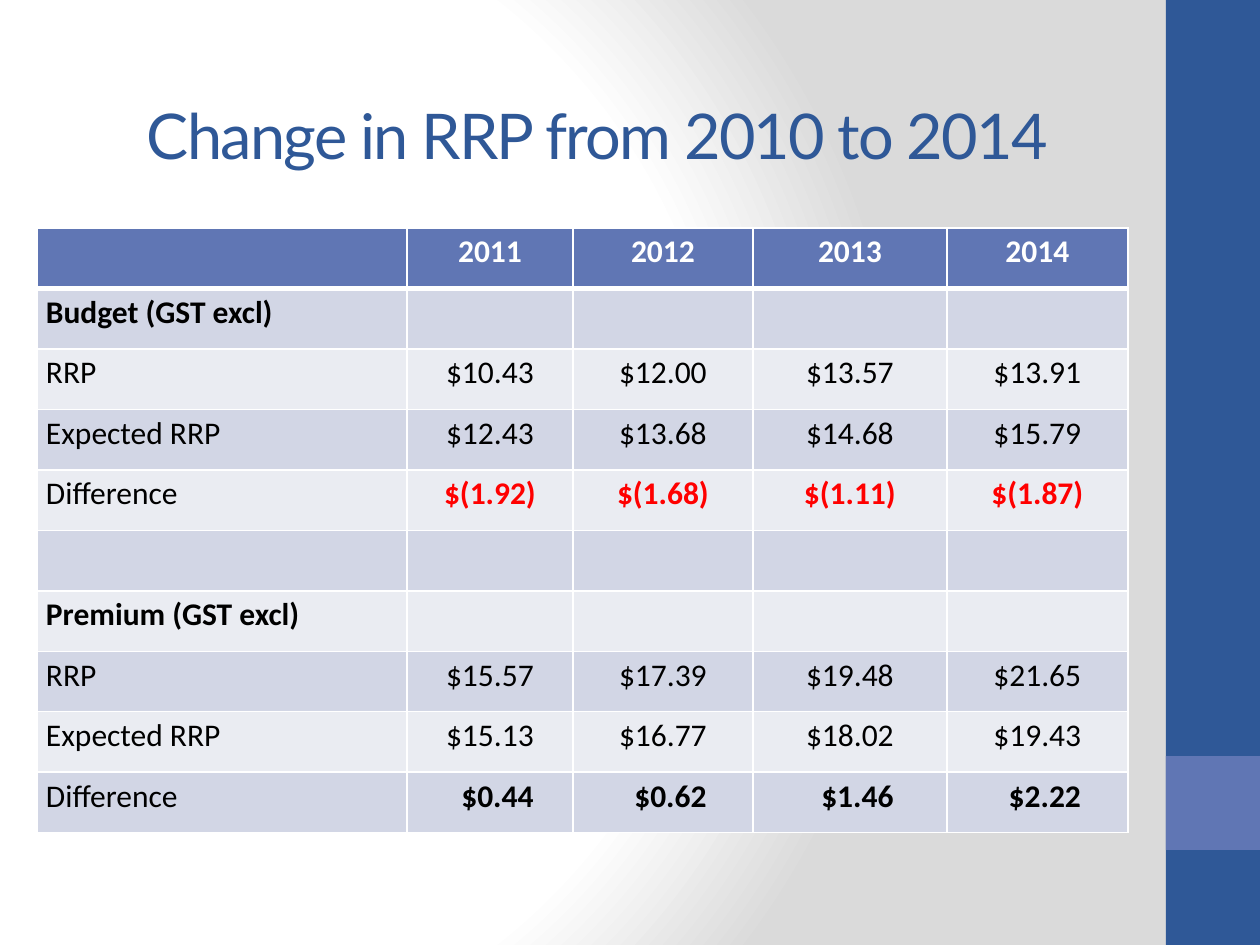
from pptx import Presentation
from pptx.dml.color import RGBColor
from pptx.enum.shapes import MSO_SHAPE
from pptx.enum.text import MSO_ANCHOR, PP_ALIGN
from pptx.oxml import parse_xml
from pptx.oxml.ns import nsdecls
from pptx.util import Emu, Pt


def px(n):
    return Emu(round(n * 914400 / 126))


def rgb(value):
    return RGBColor.from_string(value)


prs = Presentation()
prs.slide_width, prs.slide_height = px(1260), px(945)
s = prs.slides.add_slide(prs.slide_layouts[5])

# Background: circular gradient from white to grey
stops = "".join(
    f'<a:gs pos="{pos}"><a:srgbClr val="{color}"/></a:gs>'
    for pos, color in ((0, "FFFFFF"), (75000, "FFFFFF"), (100000, "DADADA")))
s.element.cSld.insert(0, parse_xml(
    f'<p:bg {nsdecls("p", "a")}><p:bgPr><a:gradFill rotWithShape="1">'
    f'<a:gsLst>{stops}</a:gsLst><a:path path="circle">'
    '<a:fillToRect l="20000" t="50000" r="100000" b="50000"/></a:path>'
    '</a:gradFill><a:effectLst/></p:bgPr></p:bg>'))

# Side bar with its accent square
for top, height, color in ((0, 945, "2F5897"), (756, 94, "6076B4")):
    sp = s.shapes.add_shape(MSO_SHAPE.RECTANGLE, px(1166), px(top), px(94), px(height))
    sp.shadow.inherit = False
    sp.fill.solid()
    sp.fill.fore_color.rgb = rgb(color)
    sp.line.fill.background()

# Title
title = s.shapes.title
title.left, title.top, title.width, title.height = px(20), px(38), px(1155), px(228)
tf = title.text_frame
tf.word_wrap = True
tf.vertical_anchor = MSO_ANCHOR.MIDDLE
tf.margin_bottom = px(42)
p = tf.paragraphs[0]
p.alignment = PP_ALIGN.CENTER
r = p.add_run()
r.text = "Change in RRP from 2010 to 2014"
for name, value in {"size": Pt(36), "name": "Lato"}.items():
    setattr(r.font, name, value)
r.font.color.rgb = rgb("2F5897")
r.font._element.set("spc", "-100")

# Price table
rows = [
    ["", "2011", "2012", "2013", "2014"],
    ["Budget (GST excl)", "", "", "", ""],
    ["RRP", "$10.43", "$12.00", "$13.57", "$13.91"],
    ["Expected RRP", "$12.43", "$13.68", "$14.68", "$15.79"],
    ["Difference", "$(1.92)", "$(1.68)", "$(1.11)", "$(1.87)"],
    ["", "", "", "", ""],
    ["Premium (GST excl)", "", "", "", ""],
    ["RRP", "$15.57", "$17.39", "$19.48", "$21.65"],
    ["Expected RRP", "$15.13", "$16.77", "$18.02", "$19.43"],
    ["Difference", "$0.44", "$0.62", "$1.46", "$2.22"],
]
widths = [370, 166, 180, 194, 181]
table = s.shapes.add_table(len(rows), len(widths), px(37), px(228),
                           px(sum(widths)), px(605)).table
for column, width in zip(table.columns, widths):
    column.width = px(width)

for i, row in enumerate(rows):
    for j, text in enumerate(row):
        cell = table.cell(i, j)
        difference = row[0] == "Difference" and j > 0
        gain = difference and "(" not in text
        margins = {"margin_left": 24 if gain else 9, "margin_right": 9,
                   "margin_top": 5, "margin_bottom": 5}
        for name, value in margins.items():
            setattr(cell, name, px(value))

        # White borders, heavier under the header
        tcPr = cell._tc.get_or_add_tcPr()
        for side in "LRTB":
            heavy = (i, side) in ((0, "B"), (1, "T"))
            tcPr.append(parse_xml(
                f'<a:ln{side} {nsdecls("a")} w="{Pt(3 if heavy else 1)}"><a:solidFill>'
                f'<a:srgbClr val="FFFFFF"/></a:solidFill></a:ln{side}>'))
        cell.fill.solid()
        cell.fill.fore_color.rgb = rgb(
            "6076B4" if i == 0 else "D2D6E5" if i % 2 else "EAECF2")

        p = cell.text_frame.paragraphs[0]
        p.alignment = PP_ALIGN.CENTER if j else PP_ALIGN.LEFT
        if text:
            r = p.add_run()
            r.text = text
            bold = i == 0 or "GST" in text or difference
            for name, value in {"size": Pt(18), "name": "Calibri", "bold": bold}.items():
                setattr(r.font, name, value)
            r.font.color.rgb = rgb(
                "FFFFFF" if i == 0 else "FF0000" if difference and not gain else "000000")

prs.save("out.pptx")
